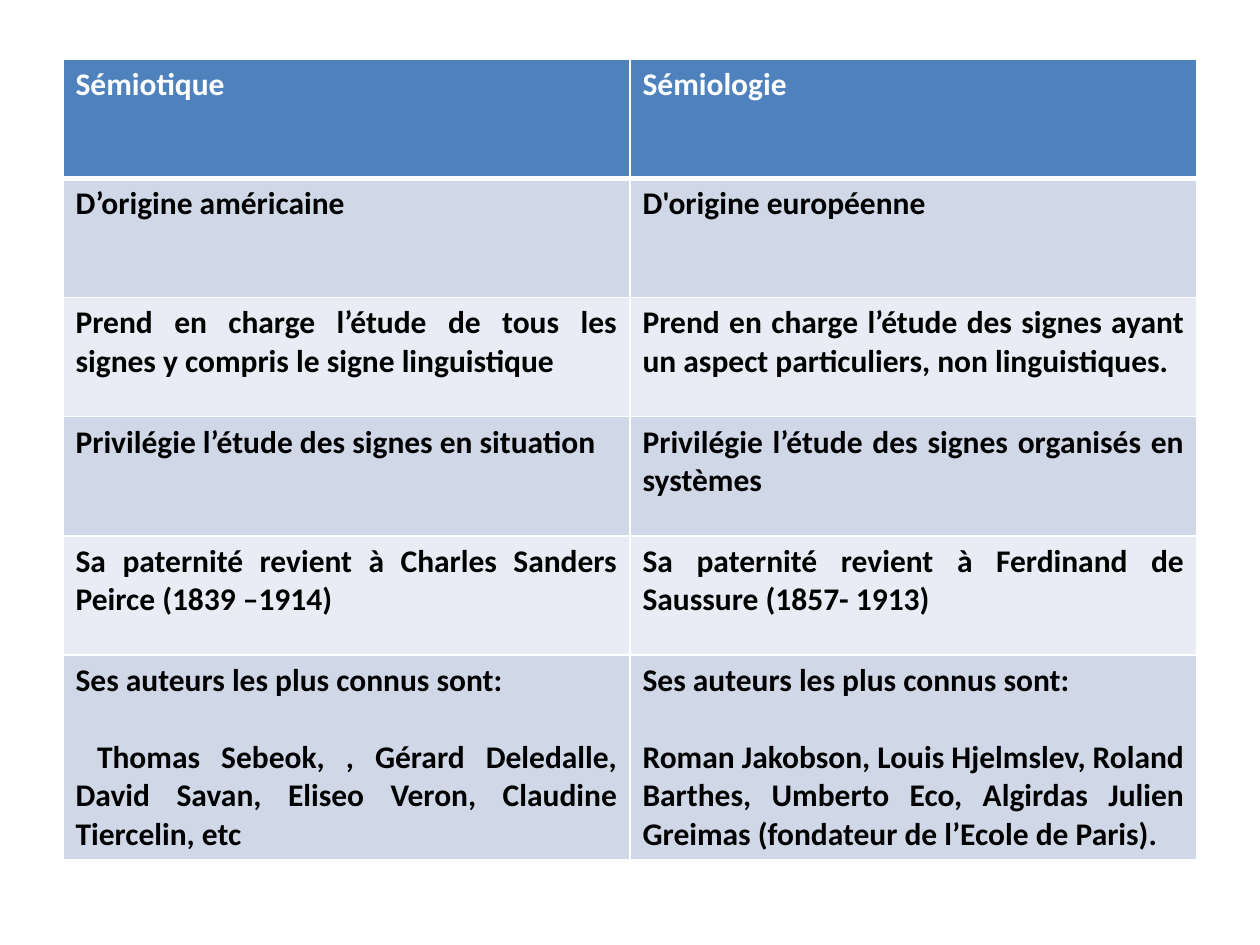
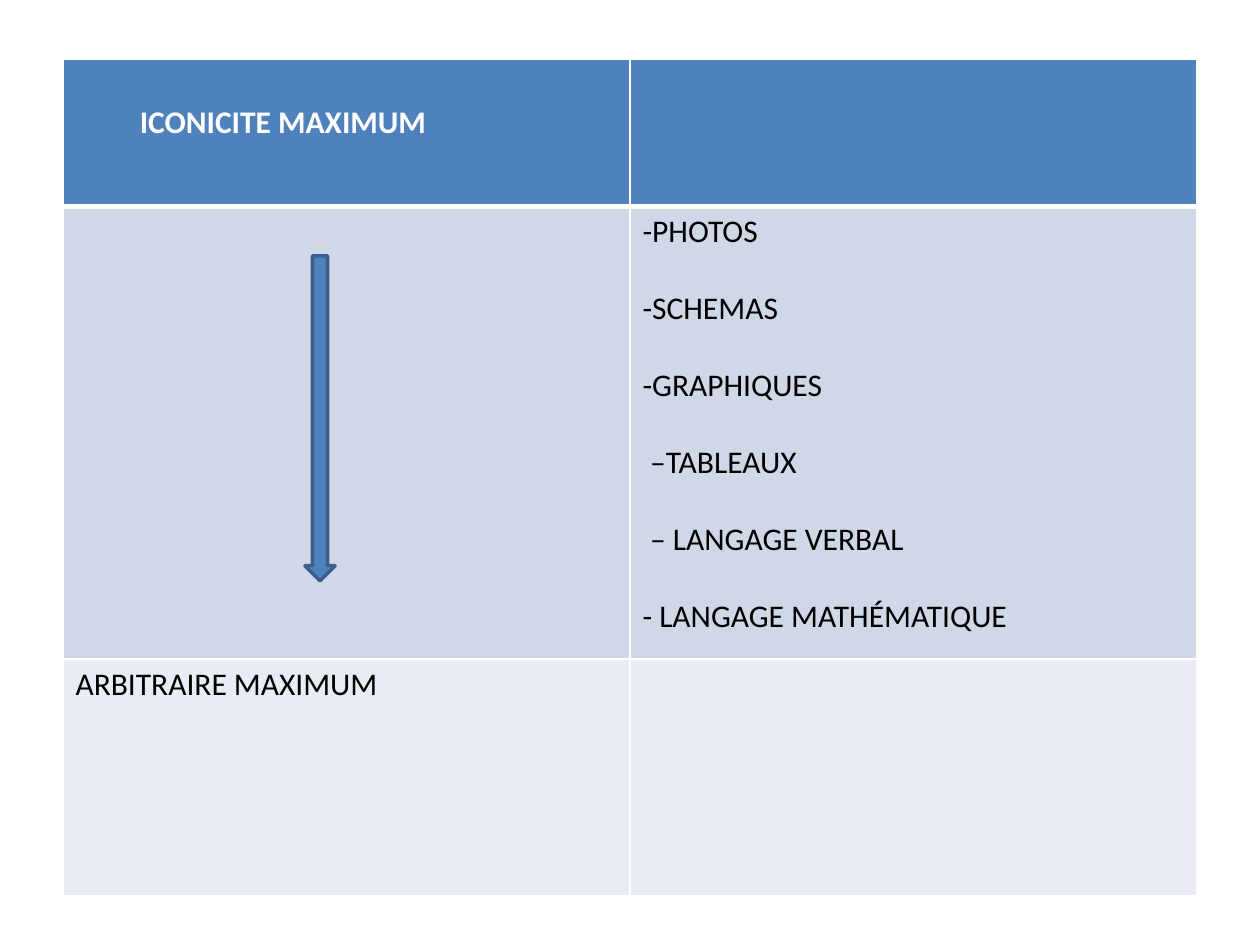
from lxml.etree import SubElement as Sub
from pptx import Presentation as Deck
from pptx.dml.color import RGBColor as Rgb
from pptx.enum.shapes import MSO_SHAPE as Shape
from pptx.enum.text import PP_ALIGN as Align
from pptx.oxml.ns import qn
from pptx.util import Inches, Pt

HUES = {"head": "4F81BD", "dark": "D0D8E8", "pale": "E9ECF4",
        "edge": "3A5F8C", "white": "FFFFFF", "black": "000000"}
FONT = {"name": "Calibri", "size": Pt(18)}
JUST = {"alignment": Align.JUSTIFY}
GAP = {"space_before": Pt(22)}
KNOWN = "Ses auteurs les plus connus sont:"

SIGNS = [
    ["Sémiotique", "Sémiologie"],
    ["D’origine américaine", "D'origine européenne"],
    ["Prend en charge l’étude de tous les signes y compris le signe linguistique",
     "Prend en charge l’étude des signes ayant un aspect particuliers, non linguistiques."],
    ["Privilégie l’étude des signes en situation",
     "Privilégie l’étude des signes organisés en systèmes"],
    ["Sa paternité revient à Charles Sanders Peirce (1839 –1914)",
     "Sa paternité revient à Ferdinand de Saussure (1857- 1913)"],
]
NAMES = [
    ("Thomas Sebeok, , Gérard Deledalle, David Savan, Eliseo Veron, "
     "Claudine Tiercelin, etc", 0.17),
    ("Roman Jakobson, Louis Hjelmslev, Roland Barthes, Umberto Eco, "
     "Algirdas Julien Greimas (fondateur de l’Ecole de Paris).", 0),
]
FORMS = [("PHOTOS", "-"), ("SCHEMAS", "-"), ("GRAPHIQUES", "-"),
         ("–TABLEAUX", ""), ("– LANGAGE VERBAL", ""),
         (" LANGAGE MATHÉMATIQUE", "-")]


def tint(name):
    """Return the named colour."""
    return Rgb.from_string(HUES[name])


def apply(item, style):
    """Set each value of a style dict on an item."""
    for key, value in style.items():
        setattr(item, key, value)


def border(cell, row):
    """Draw white cell edges, thick under the header row."""
    props = cell._tc.get_or_add_tcPr()
    wide = {"lnB": 3 if row == 0 else 1, "lnT": 3 if row == 1 else 1}
    for side in ("lnL", "lnR", "lnT", "lnB"):
        line = Sub(props, qn(f"a:{side}"), w=str(Pt(wide.get(side, 1))))
        fill = Sub(line, qn("a:solidFill"))
        Sub(fill, qn("a:srgbClr"), val=HUES["white"])


def add_grid(slide, rows):
    """Add a two-column banded table with the given row heights."""
    frame = slide.shapes.add_table(len(rows), 2, Inches(0.5), Inches(0.47),
                                   Inches(9), Inches(sum(rows)))
    grid = frame.table
    for row, high in enumerate(rows):
        grid.rows[row].height = Inches(high)
        for cell in grid.rows[row].cells:
            border(cell, row)
            cell.fill.solid()
            band = "dark" if row % 2 else "pale"
            cell.fill.fore_color.rgb = tint(band if row else "head")
            apply(cell.text_frame.paragraphs[0].font, FONT)
    return grid


def write(cell, text, hue="black", bold=False, style=None,
          left=0, first=0, mark=""):
    """Write a paragraph into a cell, after any text already there."""
    frame = cell.text_frame
    para = frame.add_paragraph() if frame.text else frame.paragraphs[0]
    apply(para, style or {})
    props = para._p.get_or_add_pPr()
    props.set("marL", str(Inches(left)))
    props.set("indent", str(Inches(first)))
    if mark:
        for old in props.findall(qn("a:defRPr")):
            props.remove(old)
        Sub(props, qn("a:buFont"), typeface=FONT["name"])
        Sub(props, qn("a:buChar"), char=mark)
    run = para.add_run()
    run.text = text
    apply(run.font, {**FONT, "bold": bold})
    run.font.color.rgb = tint(hue)


def add_arrow(slide):
    """Add the arrow from iconic to arbitrary."""
    arrow = slide.shapes.add_shape(Shape.DOWN_ARROW, Inches(2.42),
                                   Inches(2.03), Inches(0.24), Inches(2.58))
    arrow.shadow.inherit = False
    arrow.fill.solid()
    arrow.fill.fore_color.rgb = tint("head")
    arrow.line.color.rgb = tint("edge")
    arrow.line.width = Pt(2)


def add_signs(slide):
    """Compare semiotics with semiology."""
    grid = add_grid(slide, [4.73 / 5] * 5 + [1.45])
    for row, pair in enumerate(SIGNS):
        for col, text in enumerate(pair):
            write(grid.cell(row, col), text, "black" if row else "white",
                  True, JUST if row > 1 else None)
    for col, (text, first) in enumerate(NAMES):
        cell = grid.cell(5, col)
        write(cell, KNOWN, bold=True, style=JUST)
        write(cell, text, bold=True, style={**JUST, **GAP}, first=first)


def add_scale(slide):
    """Show the scale from iconic to arbitrary."""
    grid = add_grid(slide, [1.17, 3.59, 1.88])
    top = grid.cell(0, 0)
    top.margin_top = Inches(0.35)
    write(top, "ICONICITE MAXIMUM", "white", True, left=0.51)
    for row, (text, mark) in enumerate(FORMS):
        write(grid.cell(1, 1), text, style=GAP if row else None,
              left=0 if mark else 0.06, mark=mark)
    write(grid.cell(2, 0), "ARBITRAIRE MAXIMUM")
    add_arrow(slide)


def main():
    """Build and save the deck."""
    deck = Deck()
    apply(deck, {"slide_width": Inches(10), "slide_height": Inches(7.5)})
    for build in (add_signs, add_scale):
        build(deck.slides.add_slide(deck.slide_layouts[6]))
    deck.save("out.pptx")


if __name__ == "__main__":
    main()
